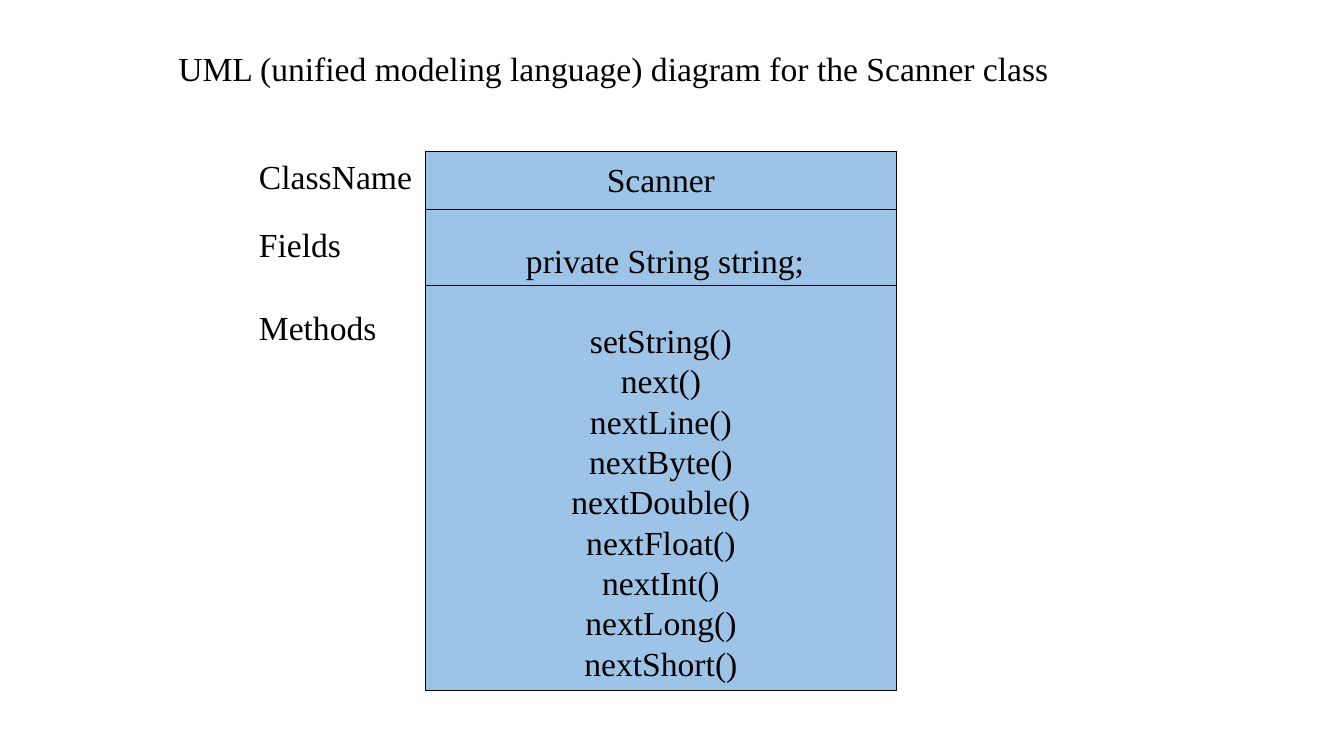
from lxml import etree
from pptx import Presentation
from pptx.dml.color import RGBColor
from pptx.enum.shapes import MSO_CONNECTOR as CONN, MSO_SHAPE as SHAPE
from pptx.enum.text import MSO_ANCHOR as ANCHOR, PP_ALIGN as ALIGN
from pptx.oxml.ns import qn
from pptx.util import Inches, Pt

BLACK = RGBColor(0x00, 0x00, 0x00)
BLUE = RGBColor(0x9D, 0xC3, 0xE6)
FONT = "Times New Roman"
SIZE = Pt(24)
LINE_HEIGHT = Pt(28.8)

TITLE = "UML (unified modeling language) diagram for the Scanner class"
CLASS_NAME = "Scanner"
FIELD = " private String string;"
METHODS = ["setString()", "next()", "nextLine()", "nextByte()", "nextDouble()",
           "nextFloat()", "nextInt()", "nextLong()", "nextShort()"]
LABELS = [("ClassName", 0, 1.75), ("Fields", 0.67, 1.5), ("Methods", 1.5, 1.5)]
DIVIDERS = [0.58, 1.33]


def write(tf, lines, align, anchor=ANCHOR.TOP):
    """Fill a text frame with one paragraph per line."""
    tf.text = "\n".join(lines)
    tf.word_wrap = True
    tf.vertical_anchor = anchor
    for p in tf.paragraphs:
        p.alignment = align
        p.line_spacing = LINE_HEIGHT
        p.space_before = Pt(0)
        for r in p.runs:
            r.font.name, r.font.size = FONT, SIZE
            r.font.color.rgb = BLACK


def add_title(s, x, y, w, h):
    """Place the slide title in its box."""
    sp = s.shapes.title
    sp.left, sp.top, sp.width, sp.height = map(Inches, (x, y, w, h))
    write(sp.text_frame, [TITLE], ALIGN.CENTER, ANCHOR.MIDDLE)


def add_divider(s, x, y, w):
    """Draw a horizontal rule between two compartments."""
    line = s.shapes.add_connector(CONN.STRAIGHT, Inches(x), Inches(y),
                                  Inches(x + w), Inches(y))
    line.line.color.rgb = BLACK
    line.line.width = Pt(0.75)
    etree.SubElement(line._element.spPr, qn("a:effectLst"))


def add_class_box(s, x, y, w, h):
    """Draw the class box with its name, field and methods."""
    sp = s.shapes.add_shape(SHAPE.RECTANGLE, *map(Inches, (x, y, w, h)))
    sp.shadow.inherit = False
    sp.fill.solid()
    sp.fill.fore_color.rgb = BLUE
    sp.line.color.rgb = BLACK
    sp.line.width = Pt(1)
    tf = sp.text_frame
    write(tf, [CLASS_NAME, FIELD, *METHODS], ALIGN.CENTER, ANCHOR.MIDDLE)
    for p in tf.paragraphs[1:3]:
        p.space_before = LINE_HEIGHT
    for dy in DIVIDERS:
        add_divider(s, x, y + dy, w)


def add_labels(s, x, y, h):
    """Place the compartment labels down the left side."""
    for text, dy, w in LABELS:
        sp = s.shapes.add_textbox(*map(Inches, (x, y + dy, w, h)))
        write(sp.text_frame, [text], ALIGN.LEFT)


def main():
    """Build the slide and save it."""
    prs = Presentation()
    prs.slide_width, prs.slide_height = Inches(13.33), Inches(7.5)
    s = prs.slides.add_slide(prs.slide_layouts[5])
    add_title(s, 1.46, 0.43, 9.25, 0.5)
    add_class_box(s, 4.22, 1.5, 4.67, 5.35)
    add_labels(s, 2.47, 1.5, 0.51)
    prs.save("out.pptx")


if __name__ == "__main__":
    main()
